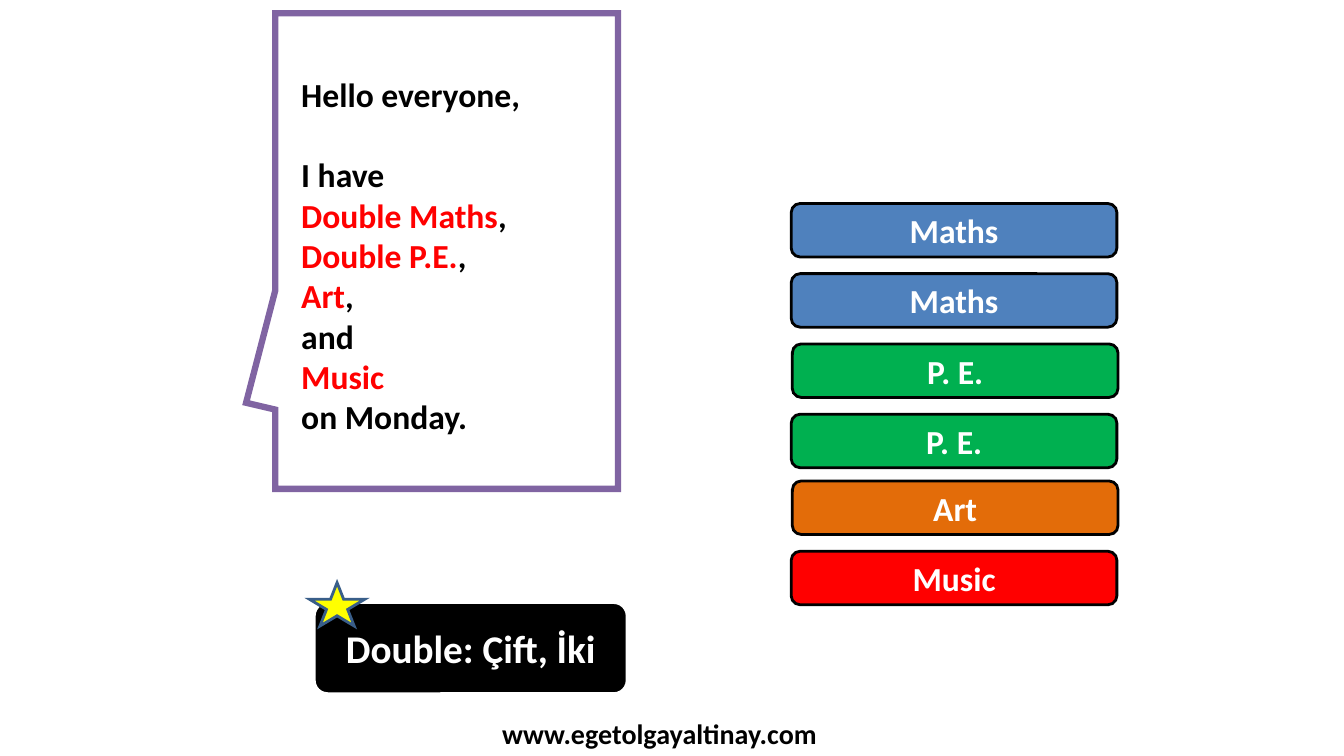
import pptx
import pptx.dml.color
import pptx.enum.shapes
import pptx.enum.text
import pptx.oxml.ns
import pptx.util
from lxml import etree

Pt = pptx.util.Pt
qn = pptx.oxml.ns.qn
SHAPE = pptx.enum.shapes.MSO_SHAPE
ANCHOR = pptx.enum.text.MSO_ANCHOR
ALIGN = pptx.enum.text.PP_ALIGN

BLACK, WHITE, RED = "000000", "FFFFFF", "FF0000"
BLUE, GREEN, ORANGE = "4F81BD", "00B050", "E36C09"
PURPLE, YELLOW, STAR_EDGE = "8064A2", "FFFF00", "395E89"


def color(hex_value):
    return pptx.dml.color.RGBColor.from_string(hex_value)


class LessonSlide:
    font = {"name": "Calibri", "bold": True}

    def __init__(self, presentation):
        self.slide = presentation.slides.add_slide(presentation.slide_layouts[6])

    def add_runs(self, paragraph, runs, size, align):
        """Fill a paragraph with (text, colour) runs."""
        paragraph.alignment = align
        for text, hex_value in runs:
            run = paragraph.add_run()
            run.text = text
            for name, value in {**self.font, "size": Pt(size)}.items():
                setattr(run.font, name, value)
            run.font.color.rgb = color(hex_value)

    def shape(self, kind, box, fill, line, width, text="", size=24):
        shape = self.slide.shapes.add_shape(kind, *map(Pt, box))
        shape.shadow.inherit = False
        shape.fill.solid()
        shape.fill.fore_color.rgb = color(fill)
        shape.line.color.rgb = color(line)
        shape.line.width = Pt(width)
        outline = shape.element.spPr.find(qn("a:ln"))
        etree.SubElement(outline, qn("a:miter"), lim="800000")
        if text:
            shape.text_frame.vertical_anchor = ANCHOR.MIDDLE
            self.add_runs(shape.text_frame.paragraphs[0], [(text, WHITE)], size, ALIGN.CENTER)
        return shape

    def text(self, box, lines, size, align=ALIGN.LEFT, gaps=None):
        """Add a text box; gaps maps a line index to its space before."""
        frame = self.slide.shapes.add_textbox(*map(Pt, box)).text_frame
        frame.word_wrap = True
        for index, runs in enumerate(lines):
            paragraph = frame.add_paragraph() if index else frame.paragraphs[0]
            if gaps and index in gaps:
                paragraph.space_before = Pt(gaps[index])
            self.add_runs(paragraph, runs, size, align)


def main():
    presentation = pptx.Presentation()
    presentation.slide_width = Pt(960)
    presentation.slide_height = Pt(540)
    lesson = LessonSlide(presentation)

    lesson.text((321, 508.3, 300, 31.5), [[("www.egetolgayaltinay.com", BLACK)]],
                20, ALIGN.CENTER)

    callout = lesson.shape(SHAPE.RECTANGULAR_CALLOUT, (196.6, 9.4, 244.8, 339.8),
                           WHITE, PURPLE, 4.5)
    callout.adjustments[0] = -0.585
    callout.adjustments[1] = 0.319
    speech = [
        [("Hello everyone,", BLACK)],
        [("I have", BLACK)],
        *[[(subject, RED), (",", BLACK)]
          for subject in ("Double Maths", "Double P.E.", "Art")],
        [("and", BLACK)],
        [("Music", RED)],
        [("on Monday.", BLACK)],
    ]
    lesson.text((208.1, 49, 233.3, 269.3), speech, 24, gaps={1: 28.8})

    timetable = [
        ("Maths", BLUE, 565.2, 145.4),
        ("Maths", BLUE, 565.2, 195.5),
        ("P. E.", GREEN, 566, 245.7),
        ("P. E.", GREEN, 565.2, 295.9),
        ("Art", ORANGE, 566, 343.6),
        ("Music", RED, 565.2, 393.8),
    ]
    for subject, fill, left, top in timetable:
        lesson.shape(SHAPE.ROUNDED_RECTANGLE, (left, top, 232.6, 38.2),
                     fill, BLACK, 2, subject)

    lesson.shape(SHAPE.ROUNDED_RECTANGLE, (222.5, 428.4, 227.5, 69.1),
                 BLACK, WHITE, 6, "Double: Çift, İki", 28)
    lesson.shape(SHAPE.STAR_5_POINT, (221, 416.2, 39.6, 31), YELLOW, STAR_EDGE, 2)

    presentation.save("out.pptx")


if __name__ == "__main__":
    main()
